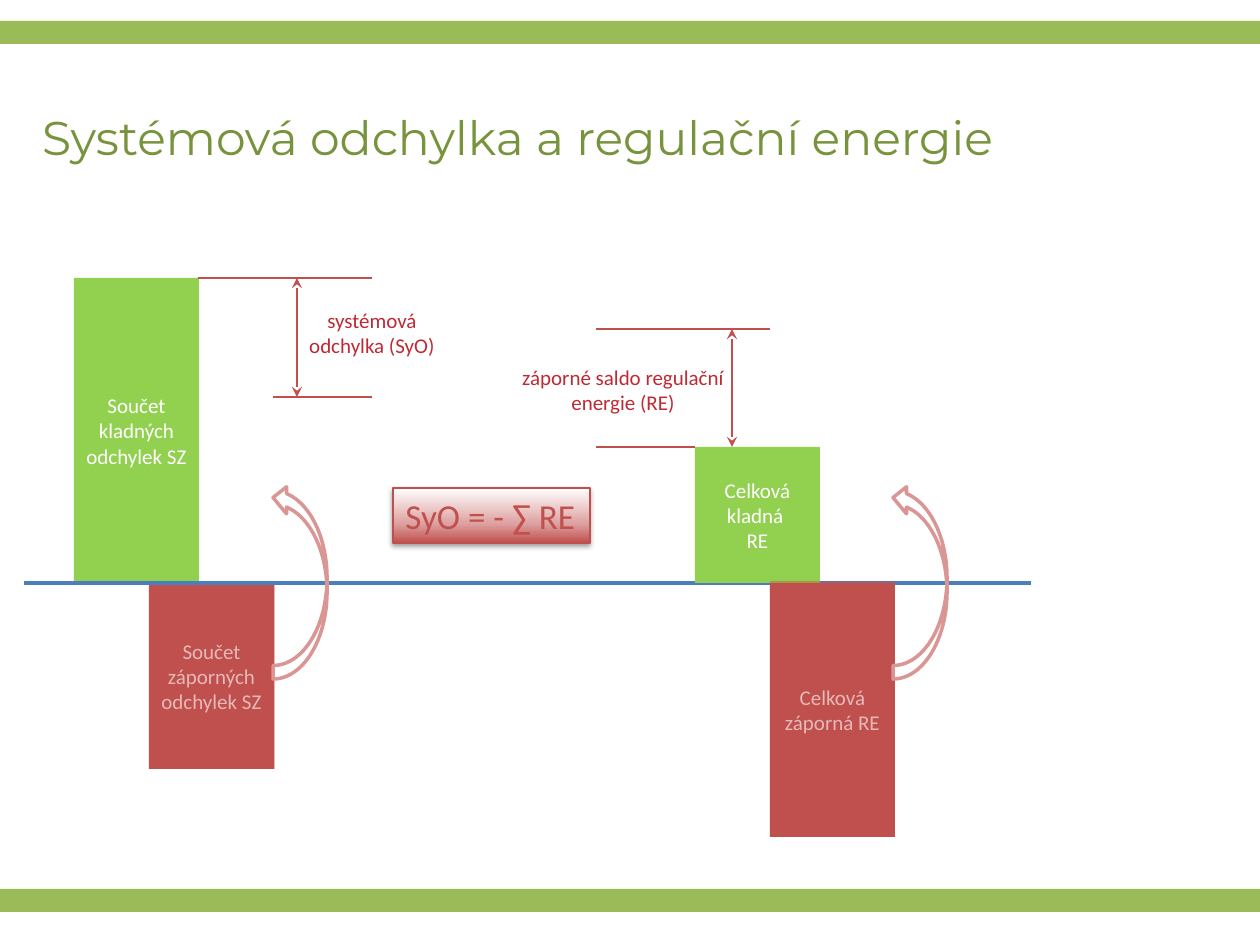
from lxml import etree
from pptx import Presentation
from pptx import util as u
from pptx.dml.color import RGBColor
from pptx.enum import shapes, text
from pptx.oxml import parse_xml
from pptx.oxml.ns import nsdecls, qn

EMU_PER_PX = 914400 / 126
SLIDE_W, SLIDE_H = 1260, 945
AXIS_Y = 583
BAR_W = 125
GREEN, RED, LABEL_RED, WHITE = "92D050", "C0504D", "BF2A34", "FFFFFF"


def px(*lengths):
    return [u.Emu(round(n * EMU_PER_PX)) for n in lengths]


def rgb(value):
    return RGBColor.from_string(value)


def write(sp, words, size, color, font="Calibri", align=text.PP_ALIGN.CENTER,
          anchor=text.MSO_ANCHOR.MIDDLE):
    tf = sp.text_frame
    tf.word_wrap = True
    tf.vertical_anchor = anchor
    tf.text = words
    p = tf.paragraphs[0]
    p.alignment = align
    p.font.size, p.font.name = u.Pt(size), font
    p.font.color.rgb = rgb(color)
    return tf


def add_rect(s, box, fill):
    sp = s.shapes.add_shape(shapes.MSO_SHAPE.RECTANGLE, *px(*box))
    sp.shadow.inherit = False
    sp.fill.solid()
    sp.fill.fore_color.rgb = rgb(fill)
    sp.line.fill.background()
    return sp


def add_line(owner, x1, y1, x2, y2, color, width, arrows=False):
    """Draw a straight line on a slide or in a group."""
    ln = owner.shapes.add_connector(shapes.MSO_CONNECTOR.STRAIGHT, *px(x1, y1, x2, y2))
    ln.line.color.rgb = rgb(color)
    ln.line.width = u.Pt(width)
    spPr = ln._element.spPr
    if arrows:
        for end in ("a:headEnd", "a:tailEnd"):
            etree.SubElement(spPr.find(qn("a:ln")), qn(end), type="stealth")
    etree.SubElement(spPr, qn("a:effectLst"))


def add_title(s, box, words):
    title = s.shapes.title
    title.left, title.top, title.width, title.height = px(*box)
    tf = write(title, words, 27, "77933C", "Montserrat", text.PP_ALIGN.LEFT)
    tf.margin_left = tf.margin_top = tf.margin_right = tf.margin_bottom = 0
    tf.auto_size = text.MSO_AUTO_SIZE.NONE


def add_bar_pair(s, x, up, down, up_words, down_words, veil):
    """Stand one bar on the axis and hang one below it, under a veil moved by (dx, dy)."""
    down_x = x + 75
    write(add_rect(s, (x, AXIS_Y - up, BAR_W, up), GREEN), up_words, 12, WHITE)
    write(add_rect(s, (down_x, AXIS_Y, BAR_W, down), RED), down_words, 12, WHITE)
    dx, dy = veil
    cover = add_rect(s, (down_x + dx, AXIS_Y + dy, BAR_W, down), RED)
    color = cover._element.spPr.find(qn("a:solidFill"))[0]
    etree.SubElement(color, qn("a:alpha"), val="40000")


def add_gauge(s, box, lower, arrow_x, label_box, words):
    """Mark a height between two lines; all x and y are relative to the box."""
    x, y, w, h = box
    group = s.shapes.add_group_shape()
    add_line(group, x, y, x + w, y, RED, 0.75)
    add_line(group, x + lower[0], y + h, x + lower[1], y + h, RED, 0.75)
    add_line(group, x + arrow_x, y + h, x + arrow_x, y, RED, 1.5, arrows=True)
    lx, ly, lw, lh = label_box
    label = group.shapes.add_textbox(*px(x + lx, y + ly, lw, lh))
    write(label, words, 12, LABEL_RED, anchor=text.MSO_ANCHOR.TOP)


def add_formula(s, box, words):
    sp = add_rect(s, box, WHITE)
    tf = write(sp, words, 20, RED, align=text.PP_ALIGN.LEFT, anchor=text.MSO_ANCHOR.TOP)
    tf.word_wrap = False
    sp.line.color.rgb = rgb(RED)
    sp.line.width = u.Pt(0.75)
    stops = "".join(
        f'<a:gs pos="{pos * 1000}"><a:srgbClr val="{color}"/></a:gs>'
        for pos, color in ((0, RED), (35, "DDA1A0"), (100, WHITE)))
    spPr = sp._element.spPr
    spPr.replace(spPr.find(qn("a:solidFill")), parse_xml(
        f'<a:gradFill {nsdecls("a")} rotWithShape="1"><a:gsLst>{stops}</a:gsLst>'
        '<a:lin ang="16200000" scaled="0"/></a:gradFill>'))
    spPr.find(qn("a:effectLst")).append(parse_xml(
        f'<a:outerShdw {nsdecls("a")} blurRad="39370" dist="20320" dir="5400000" '
        'rotWithShape="0"><a:srgbClr val="000000"><a:alpha val="38000"/></a:srgbClr>'
        '</a:outerShdw>'))


def add_curved_arrow(s, box):
    sp = s.shapes.add_shape(shapes.MSO_SHAPE.CURVED_LEFT_ARROW, *px(*box))
    sp.shadow.inherit = False
    sp.fill.background()
    sp.line.color.rgb = rgb("D99694")
    sp.line.width = u.Pt(2)
    sp.rotation = 180
    sp._element.spPr.find(qn("a:xfrm")).set("flipH", "1")


def main():
    prs = Presentation()
    prs.slide_width, prs.slide_height = px(SLIDE_W, SLIDE_H)
    s = prs.slides.add_slide(prs.slide_layouts[5])

    for y in (889, 21):
        add_rect(s, (0, y, SLIDE_W, 23), "9BBB59")
    add_title(s, (42, 79, 1008, 115), "Systémová odchylka a regulační energie")

    add_bar_pair(s, 74, 305, 186, "Součet kladných odchylek SZ",
                 "Součet záporných odchylek SZ", (1, 0))
    add_line(s, 24, AXIS_Y, 1031, AXIS_Y, "4B7EBC", 2)
    add_gauge(s, (198, 278, 174, 119), (75, 174), 99, (87, 23, 174, 63),
              "systémová odchylka (SyO)")

    add_bar_pair(s, 695, 136, 254, "Celková kladná \vRE", "Celková záporná RE", (0, -2))
    add_gauge(s, (596, 329, 174, 118), (0, 99), 136, (-91, 29, 236, 63),
              "záporné saldo regulační energie (RE)")

    add_formula(s, (393, 488, 197, 55), "SyO = - ∑ RE")
    for x in (273, 893):
        add_curved_arrow(s, (x, 484, 54, 195))

    prs.save("out.pptx")


if __name__ == "__main__":
    main()
